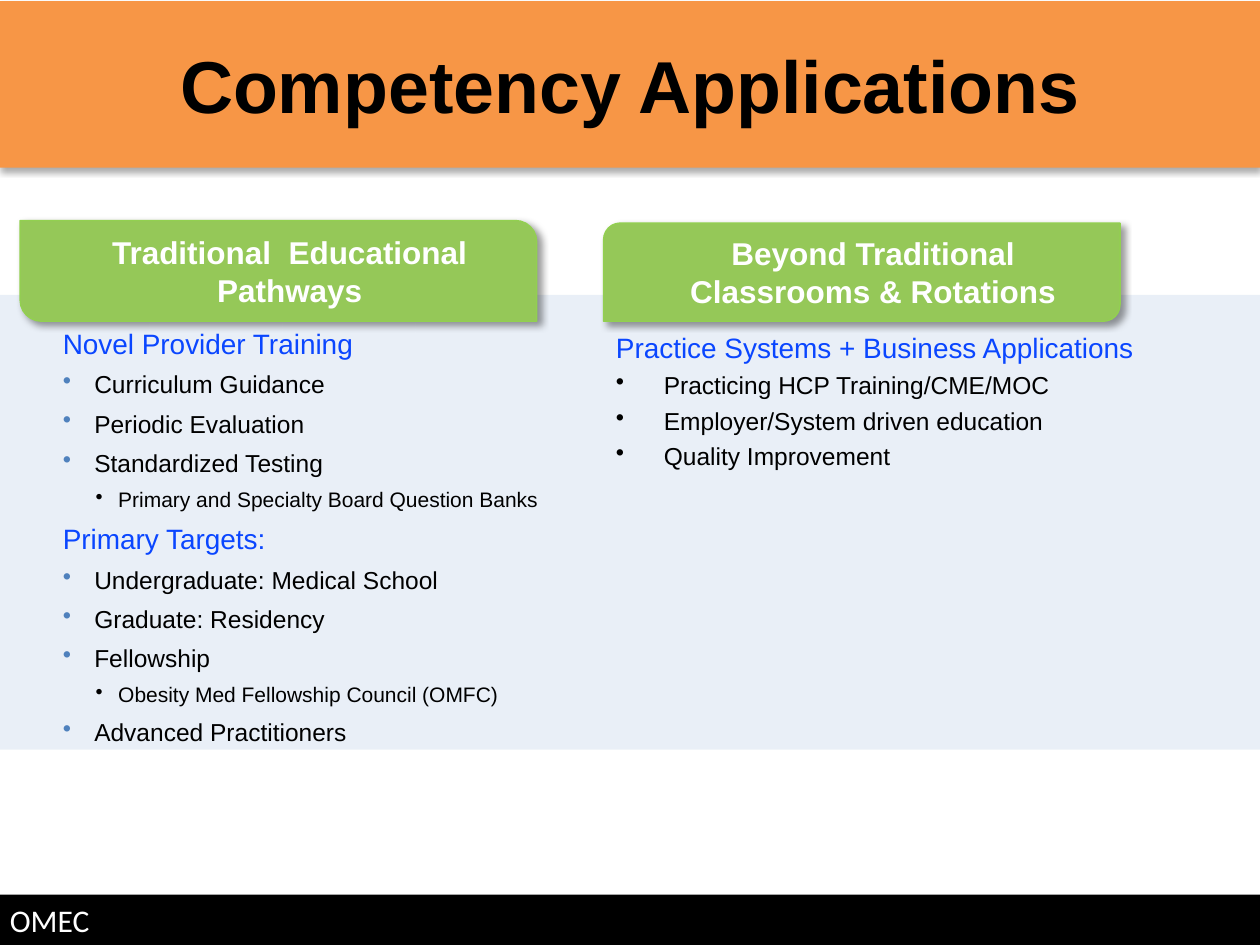
from dataclasses import dataclass

import lxml.etree
import pptx
import pptx.dml.color
import pptx.enum.shapes
import pptx.enum.text
import pptx.oxml.ns
import pptx.util

Inches = pptx.util.Inches
Pt = pptx.util.Pt
Shapes = pptx.enum.shapes.MSO_SHAPE
Align = pptx.enum.text.PP_ALIGN
Anchor = pptx.enum.text.MSO_ANCHOR
qn = pptx.oxml.ns.qn

COLORS = {
    "orange": "F79646",
    "green": "95C858",
    "green_line": "92D050",
    "pale_blue": "95B3D7",
    "heading_blue": "0A46FF",
    "bullet_blue": "4F81BD",
    "black": "000000",
    "white": "FFFFFF",
}


@dataclass(frozen=True)
class Shadow:
    opacity: int
    blur: float
    distance: float
    angle: int


@dataclass(frozen=True)
class Panel:
    left: float
    top: float
    width: float
    height: float
    fill: str
    kind: Shapes = Shapes.RECTANGLE
    line: str | None = None
    shadow: Shadow | None = None
    opacity: int = 100


@dataclass(frozen=True)
class Label:
    text: str
    size: float
    color: str
    font: str = "Arial"
    bold: bool = True
    align: Align = Align.CENTER
    anchor: Anchor = Anchor.TOP
    indent: float = 0


@dataclass(frozen=True)
class Style:
    size: float
    color: str
    level: int = 0
    margin: float = 0
    hanging: float = 0
    bullet: str | None = None


HEADING = Style(16, "heading_blue")
TOPIC = Style(14, "black", 1, 0.25, 0.25, "bullet_blue")
DETAIL = Style(12, "black", 2, 0.44, 0.18, "black")
APPLICATION = Style(14, "black", 0, 0.38, 0.38, "black")

PATHWAYS = [
    ("Novel Provider Training", HEADING),
    ("Curriculum Guidance", TOPIC),
    ("Periodic Evaluation", TOPIC),
    ("Standardized Testing", TOPIC),
    ("Primary and Specialty Board Question Banks", DETAIL),
    ("Primary Targets:", HEADING),
    ("Undergraduate: Medical School", TOPIC),
    ("Graduate: Residency", TOPIC),
    ("Fellowship", TOPIC),
    ("Obesity Med Fellowship Council (OMFC)", DETAIL),
    ("Advanced Practitioners", TOPIC),
]
BEYOND = [
    ("Practice Systems + Business Applications", HEADING),
    ("Practicing HCP Training/CME/MOC", APPLICATION),
    ("Employer/System driven education", APPLICATION),
    ("Quality Improvement", APPLICATION),
]

TAB_SHADOW = Shadow(40, 4, 3, 45)
TITLE_SHADOW = Shadow(32, 3.5, 2.2, 90)


def rgb(name: str) -> pptx.dml.color.RGBColor:
    return pptx.dml.color.RGBColor.from_string(COLORS[name])


def add_color(parent, name: str, opacity: int = 100) -> None:
    color = lxml.etree.SubElement(parent, qn("a:srgbClr"), val=COLORS[name])
    if opacity < 100:
        lxml.etree.SubElement(color, qn("a:alpha"), val=str(opacity * 1000))


def add_shadow(shape, shadow: Shadow) -> None:
    effects = shape._element.spPr.find(qn("a:effectLst"))
    outer = lxml.etree.SubElement(
        effects,
        qn("a:outerShdw"),
        blurRad=str(int(Pt(shadow.blur))),
        dist=str(int(Pt(shadow.distance))),
        dir=str(shadow.angle * 60000),
        algn="tl",
        rotWithShape="0",
    )
    add_color(outer, "black", shadow.opacity)


def add_panel(page, panel: Panel):
    shape = page.shapes.add_shape(
        panel.kind,
        Inches(panel.left),
        Inches(panel.top),
        Inches(panel.width),
        Inches(panel.height),
    )
    shape.shadow.inherit = False
    shape.fill.solid()
    shape.fill.fore_color.rgb = rgb(panel.fill)
    if panel.opacity < 100:
        solid = shape._element.spPr.find(qn("a:solidFill"))
        solid.clear()
        add_color(solid, panel.fill, panel.opacity)
    if panel.line:
        shape.line.color.rgb = rgb(panel.line)
        shape.line.width = Pt(0.75)
    else:
        shape.line.fill.background()
    if panel.shadow:
        add_shadow(shape, panel.shadow)
    return shape


def add_label(shape, label: Label) -> None:
    frame = shape.text_frame
    frame.word_wrap = True
    frame.vertical_anchor = label.anchor
    para = frame.paragraphs[0]
    para.text = label.text
    para.alignment = label.align
    para.font.name = label.font
    para.font.size = Pt(label.size)
    para.font.bold = label.bold
    para.font.color.rgb = rgb(label.color)
    if label.indent:
        para._p.get_or_add_pPr().set("marL", str(int(Inches(label.indent))))


def add_list(page, left: float, top: float, width: float, items: list[tuple[str, Style]], gap: float) -> None:
    box = page.shapes.add_textbox(Inches(left), Inches(top), Inches(width), Inches(3.61))
    frame = box.text_frame
    frame.word_wrap = True
    for index, (text, style) in enumerate(items):
        para = frame.add_paragraph() if index else frame.paragraphs[0]
        para.text = text
        para.level = style.level
        para.space_before = Pt(gap)
        para.font.name = "Arial"
        para.font.size = Pt(style.size)
        para.font.color.rgb = rgb(style.color)
        properties = para._p.get_or_add_pPr()
        properties.set("marL", str(int(Inches(style.margin))))
        properties.set("indent", str(-int(Inches(style.hanging))))
        if style.bullet:
            bullet_color = pptx.oxml.parse_xml(f'<a:buClr {pptx.oxml.ns.nsdecls("a")}/>')
            add_color(bullet_color, style.bullet)
            bullet = pptx.oxml.parse_xml(f'<a:buChar {pptx.oxml.ns.nsdecls("a")} char="•"/>')
            properties.find(qn("a:defRPr")).addprevious(bullet_color)
            bullet_color.addnext(bullet)


def main() -> None:
    deck = pptx.Presentation()
    deck.slide_width, deck.slide_height = Inches(10), Inches(7.5)
    page = deck.slides.add_slide(deck.slide_layouts[6])

    add_panel(page, Panel(0, 2.34, 10, 3.61, "pale_blue", opacity=20))
    add_list(page, 4.79, 2.57, 4.81, BEYOND, 3.6)
    add_list(page, 0.4, 2.54, 4.6, PATHWAYS, 5.5)

    for left, top, height, corners, text in (
        (0.16, 1.75, 0.8, (0, 0.21), "Traditional  Educational Pathways"),
        (4.79, 1.77, 0.78, (0.17, 0), "Beyond Traditional Classrooms & Rotations"),
    ):
        tab = add_panel(
            page,
            Panel(left, top, 4.1, height, "green", Shapes.ROUND_2_DIAG_RECTANGLE, "green_line", TAB_SHADOW),
        )
        tab.adjustments[0], tab.adjustments[1] = corners
        add_label(tab, Label(text, 18, "white", indent=0.18))

    title = add_panel(page, Panel(0, 0.01, 10, 1.32, "orange", shadow=TITLE_SHADOW))
    add_label(title, Label("Competency Applications", 42, "black", anchor=Anchor.MIDDLE))

    footer = add_panel(page, Panel(-0.02, 7.1, 10.02, 0.4, "black"))
    add_label(footer, Label("OMEC", 18, "white", "Calibri", False, Align.LEFT))

    deck.save("out.pptx")


if __name__ == "__main__":
    main()
